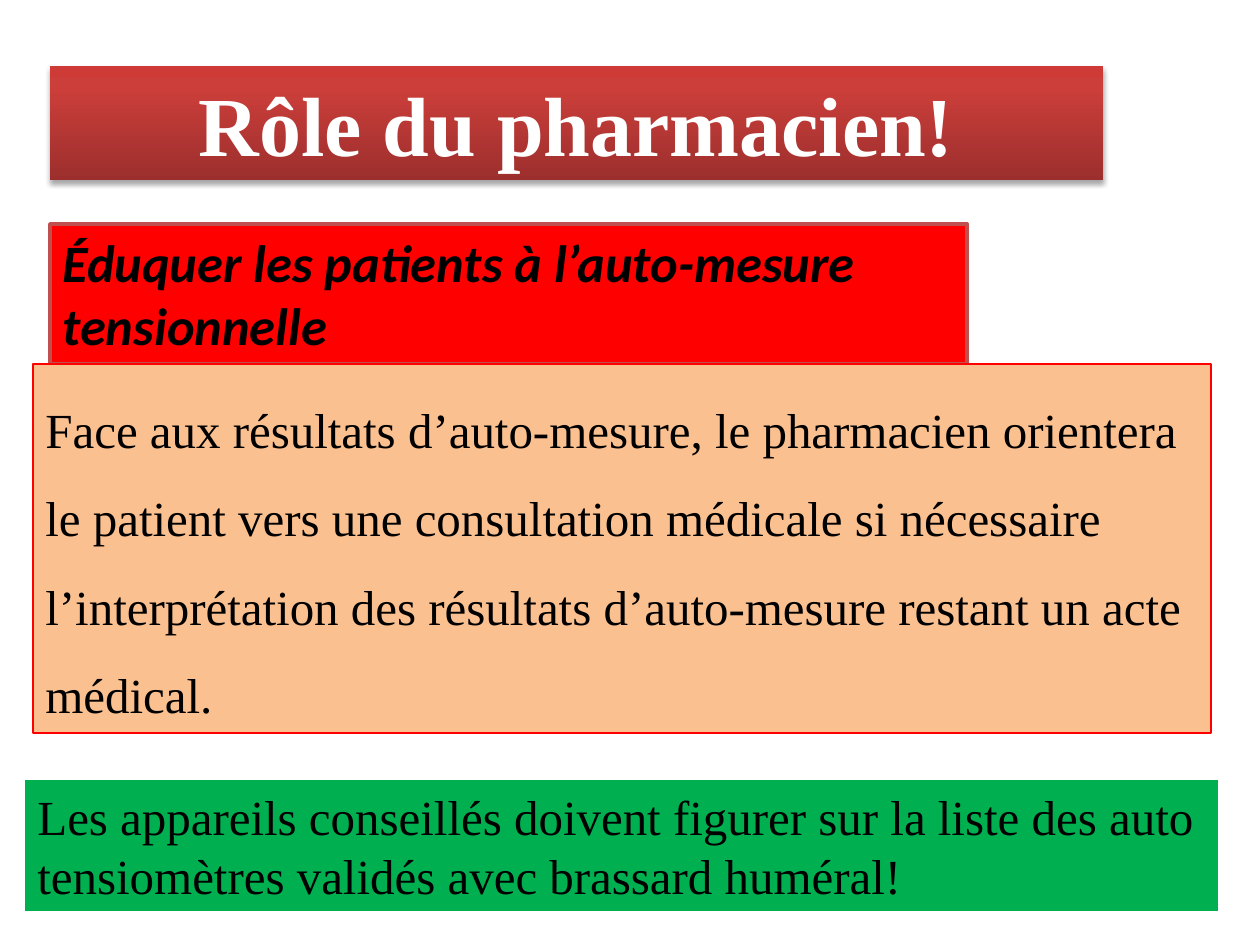
from copy import deepcopy
from dataclasses import dataclass

from lxml import etree
from pptx import Presentation
from pptx.dml.color import RGBColor
from pptx.enum.shapes import MSO_SHAPE
from pptx.enum.text import MSO_ANCHOR, MSO_AUTO_SIZE, PP_ALIGN
from pptx.oxml.ns import qn
from pptx.util import Emu, Pt

RECT = MSO_SHAPE.RECTANGLE
TOP = MSO_ANCHOR.TOP
GROW = MSO_AUTO_SIZE.SHAPE_TO_FIT_TEXT
LEFT, CENTER = PP_ALIGN.LEFT, PP_ALIGN.CENTER
BLANK = 6
EMU_PER_PX = 914400 / 126


def px(n):
    return Emu(round(n * EMU_PER_PX))


@dataclass(frozen=True)
class Theme:
    serif: str = "Times New Roman"
    sans: str = "Calibri"
    title_size: int = 48
    heading_size: int = 30
    body_size: int = 28
    white: str = "FFFFFF"
    black: str = "000000"
    red: str = "FF0000"
    brick: str = "C0504D"
    peach: str = "FAC090"
    green: str = "00B050"
    title_stops: tuple = ((0, "9C2F2D"), (0.8, "CB3E3A"), (1, "CE3B37"))


class Deck:
    def __init__(self, prs, theme):
        self.theme = theme
        self.s = prs.slides.add_slide(prs.slide_layouts[BLANK])

    def box(self, at, paragraphs, font, fill=None, line=None, align=LEFT, spacing=None):
        sp = self.s.shapes.add_shape(RECT, *map(px, at))
        sp.shadow.inherit = False
        if fill:
            sp.fill.solid()
            sp.fill.fore_color.rgb = RGBColor.from_string(fill)
        if line:
            color, width = line
            sp.line.color.rgb = RGBColor.from_string(color)
            sp.line.width = Pt(width)
        else:
            sp.line.fill.background()
        tf = sp.text_frame
        for name, value in {"word_wrap": True, "auto_size": GROW, "vertical_anchor": TOP}.items():
            setattr(tf, name, value)
        for i, text in enumerate(paragraphs):
            p = tf.add_paragraph() if i else tf.paragraphs[0]
            p.alignment = align
            p.line_spacing = spacing
            r = p.add_run()
            r.text = text
            self.format(r.font, font)
        return sp

    def format(self, font, values):
        values = dict(values)
        color = values.pop("color", self.theme.black)
        font.color.rgb = RGBColor.from_string(color)
        for name, value in values.items():
            setattr(font, name, value)

    def title(self, at, text):
        t = self.theme
        font = {"name": t.serif, "size": Pt(t.title_size), "bold": True, "color": t.white}
        sp = self.box(at, [text], font, align=CENTER)
        self.gradient(sp, t.title_stops)
        self.shadow(sp)

    def heading(self, at, text):
        t = self.theme
        font = {"name": t.sans, "size": Pt(t.heading_size), "bold": True, "italic": True}
        self.box(at, [text], font, t.red, (t.brick, 2))

    def body(self, at, paragraphs, fill, line=None, spacing=None):
        t = self.theme
        font = {"name": t.serif, "size": Pt(t.body_size)}
        self.box(at, paragraphs, font, fill, line, spacing=spacing)

    def gradient(self, sp, stops):
        sp.fill.gradient()
        sp.fill.gradient_angle = 90
        gs_list = sp._element.spPr.find(".//" + qn("a:gsLst"))
        gs_list.append(deepcopy(gs_list[-1]))
        for stop, (position, color) in zip(sp.fill.gradient_stops, stops):
            stop.position = position
            stop.color.rgb = RGBColor.from_string(color)

    def shadow(self, sp):
        effects = sp._element.spPr.find(qn("a:effectLst"))
        outer = etree.SubElement(effects, qn("a:outerShdw"), blurRad="40000",
                                 dist="23000", dir="5400000", rotWithShape="0")
        color = etree.SubElement(outer, qn("a:srgbClr"), val=self.theme.black)
        etree.SubElement(color, qn("a:alpha"), val="35000")


def main():
    prs = Presentation()
    prs.slide_width, prs.slide_height = px(1260), px(945)
    theme = Theme()
    deck = Deck(prs, theme)
    deck.title((50, 66, 1053, 114), "Rôle du pharmacien!")
    deck.heading((50, 224, 917, 140), "Éduquer les patients à l’auto-mesure tensionnelle")
    deck.body((25, 780, 1193, 131), [
        "Les appareils conseillés doivent figurer sur la liste des auto "
        "tensiomètres validés avec brassard huméral!",
    ], theme.green)
    deck.body((33, 364, 1178, 369), [
        "Face aux résultats d’auto-mesure, le pharmacien orientera "
        "le patient vers une consultation médicale si nécessaire",
        "l’interprétation des résultats d’auto-mesure restant un acte médical.",
    ], theme.peach, (theme.red, 0.75), 1.5)
    prs.save("out.pptx")


if __name__ == "__main__":
    main()
